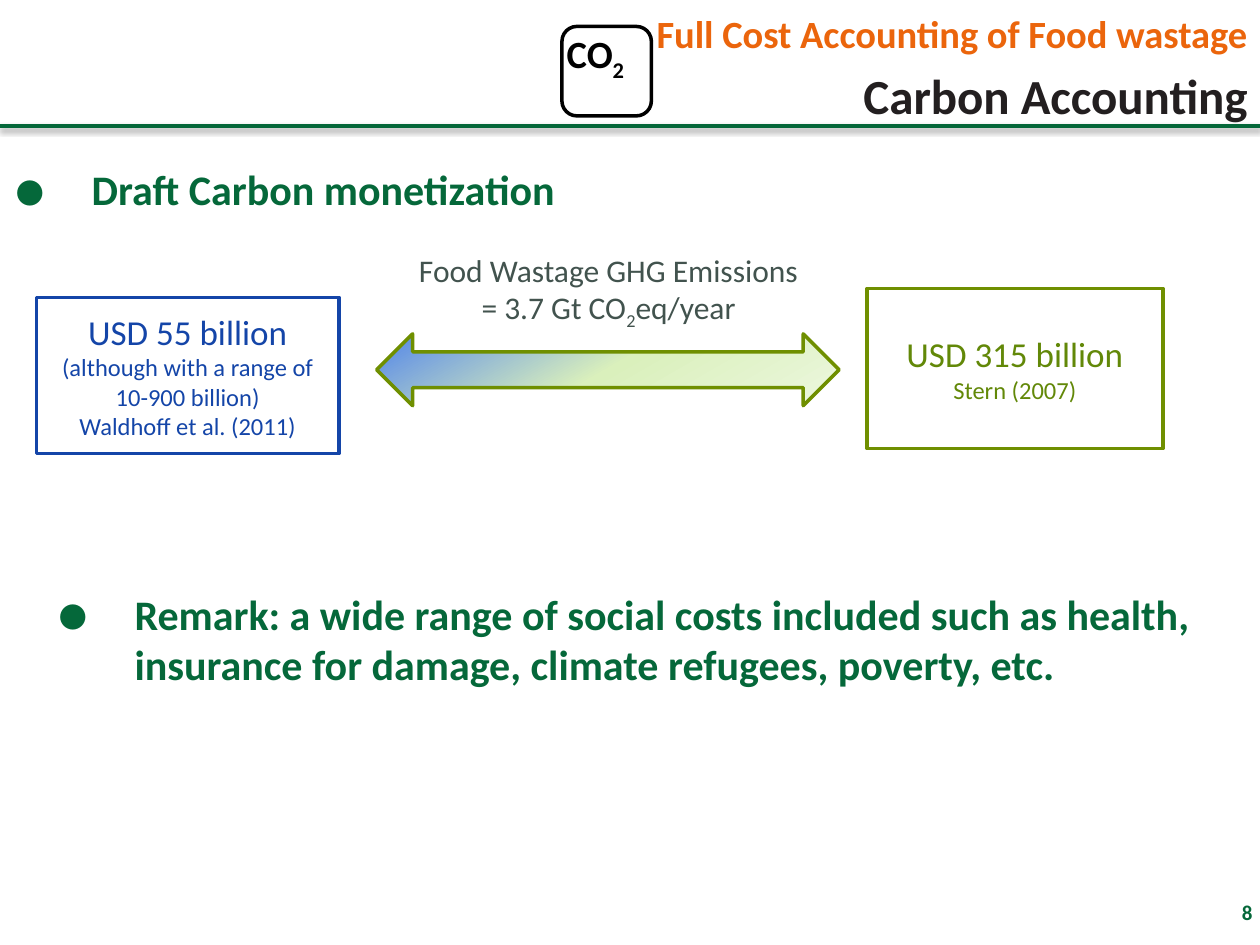
from lxml import etree
from pptx import Presentation
from pptx.dml.color import RGBColor
from pptx.enum.shapes import MSO_CONNECTOR, MSO_SHAPE
from pptx.enum.text import MSO_ANCHOR, PP_ALIGN
from pptx.oxml import parse_xml
from pptx.oxml.ns import nsdecls, qn
from pptx.util import Inches, Pt

GREEN, ORANGE, INK, SLATE = "05683A", "EB650C", "231F20", "42534E"
BLUE, OLIVE, LEAF, BLACK, WHITE = "1445A8", "6F8F00", "628808", "000000", "FFFFFF"
LEFT, CENTER, RIGHT = PP_ALIGN.LEFT, PP_ALIGN.CENTER, PP_ALIGN.RIGHT

# Content: a paragraph is a list of (text, size) or (text, size, baseline) runs
HEADINGS = [  # box, text, size, colour
    ((1.5, 0.03, 8.5, 0.39), "Full Cost Accounting of Food wastage", 22, ORANGE),
    ((1.48, 0.47, 8.52, 0.31), "Carbon Accounting", 28, INK),
    ((9.26, 7.09, 0.78, 0.23), "8", 12, GREEN),
]
BULLETS = [
    ((0, 1.25, 10, 0.71), "Draft Carbon monetization"),
    ((0.34, 4.62, 9.33, 0.91),
     "Remark: a wide range of social costs included such as health, "
     "insurance for damage, climate refugees, poverty, etc."),
]
EMISSIONS = [
    [("Food Wastage GHG Emissions", 18)],
    [("= 3.7 Gt CO", 18), ("2", 18, -25), ("eq/year", 18)],
]
ESTIMATES = [  # box, fill, line colour, text colour, paragraphs
    ((0.29, 2.36, 2.4, 1.24), None, BLUE, BLUE,
     [[("USD 55 billion", 20)],
      [("(although with a range of 10-900 billion)", 14)],
      [("Waldhoff et al. (2011)", 14)]]),
    ((6.88, 2.29, 2.35, 1.27), WHITE, OLIVE, LEAF,
     [[("USD 315 billion", 20)], [("Stern (2007)", 14)]]),
]
ARROW_STOPS = [(0, "5285EA"), (50, "DAF0BC"), (100, "ECF7DE")]


def rgb(value):
    return RGBColor.from_string(value)


def write(shape, paragraphs, color, align=LEFT, bold=False, wrap=True,
          anchor=MSO_ANCHOR.TOP):
    tf = shape.text_frame
    tf.word_wrap = wrap
    tf.vertical_anchor = anchor
    for i, runs in enumerate(paragraphs):
        p = tf.paragraphs[0] if i == 0 else tf.add_paragraph()
        p.alignment = align
        for text, size, *baseline in runs:
            r = p.add_run()
            r.text = text
            r.font.name, r.font.size, r.font.bold = "Calibri", Pt(size), bold
            r.font.color.rgb = rgb(color)
            if baseline:
                r._r.get_or_add_rPr().set("baseline", str(baseline[0] * 1000))
    return tf


def add_text(box, *args, **kwargs):
    return write(s.shapes.add_textbox(*map(Inches, box)), *args, **kwargs)


def add_shape(kind, box, fill, line):
    sp = s.shapes.add_shape(kind, *map(Inches, box))
    sp.shadow.inherit = False
    if fill:
        sp.fill.solid()
        sp.fill.fore_color.rgb = rgb(fill)
    else:
        sp.fill.background()
    sp.line.color.rgb = rgb(line)
    sp.line.width = Pt(2)
    return sp


def add_bullet(p):
    pPr = p._p.get_or_add_pPr()
    pPr.set("marL", str(Inches(0.63)))
    pPr.set("indent", str(-Inches(0.63)))
    etree.SubElement(pPr, qn("a:buSzPct")).set("val", "170000")
    etree.SubElement(pPr, qn("a:buFont")).set("typeface", "Calibri")
    etree.SubElement(pPr, qn("a:buChar")).set("char", "•")
    p.space_after = Pt(12)


def set_gradient(sp, stops, angle):
    gs = "".join(f'<a:gs pos="{pos * 1000}"><a:srgbClr val="{color}"/></a:gs>'
                 for pos, color in stops)
    gradient = parse_xml(f'<a:gradFill {nsdecls("a")}><a:gsLst>{gs}</a:gsLst>'
                         f'<a:lin ang="{angle * 60000}" scaled="0"/></a:gradFill>')
    spPr = sp._element.spPr
    spPr.replace(spPr.find(qn("a:noFill")), gradient)


prs = Presentation()
prs.slide_width, prs.slide_height = Inches(10), Inches(7.5)
s = prs.slides.add_slide(prs.slide_layouts[6])

# Header rule with a soft shadow below it
rule = s.shapes.add_connector(MSO_CONNECTOR.STRAIGHT, 0, Inches(1), Inches(10), Inches(1))
rule.line.color.rgb = rgb(GREEN)
rule.line.width = Pt(2)
rule._element.spPr.append(parse_xml(
    f'<a:effectLst {nsdecls("a")}>'
    f'<a:outerShdw blurRad="{Pt(3.1)}" dist="{Pt(1.8)}" dir="5400000" rotWithShape="0">'
    f'<a:srgbClr val="{BLACK}"><a:alpha val="35000"/></a:srgbClr>'
    '</a:outerShdw></a:effectLst>'))

# Headings and page number
for box, text, size, color in HEADINGS:
    add_text(box, [[(text, size)]], color, RIGHT, bold=True)

# Bullet statements
for box, text in BULLETS:
    tf = add_text(box, [[(text, 24)]], GREEN, bold=True)
    add_bullet(tf.paragraphs[0])

# Range arrow and its caption
arrow = add_shape(MSO_SHAPE.LEFT_RIGHT_ARROW, (2.99, 2.65, 3.67, 0.57), None, OLIVE)
set_gradient(arrow, ARROW_STOPS, 60)
add_text((2.98, 1.94, 3.7, 0.71), EMISSIONS, SLATE, CENTER)

# Low and high cost estimates
for box, fill, line, color, paragraphs in ESTIMATES:
    write(add_shape(MSO_SHAPE.RECTANGLE, box, fill, line), paragraphs, color,
          CENTER, anchor=MSO_ANCHOR.MIDDLE)

# CO2 badge
add_shape(MSO_SHAPE.ROUNDED_RECTANGLE, (4.46, 0.21, 0.71, 0.71), WHITE, BLACK)
add_text((4.39, 0.19, 0.67, 0.47), [[("CO", 22), ("2", 22, -25)]], BLACK, CENTER,
         bold=True, wrap=False)

prs.save("out.pptx")
